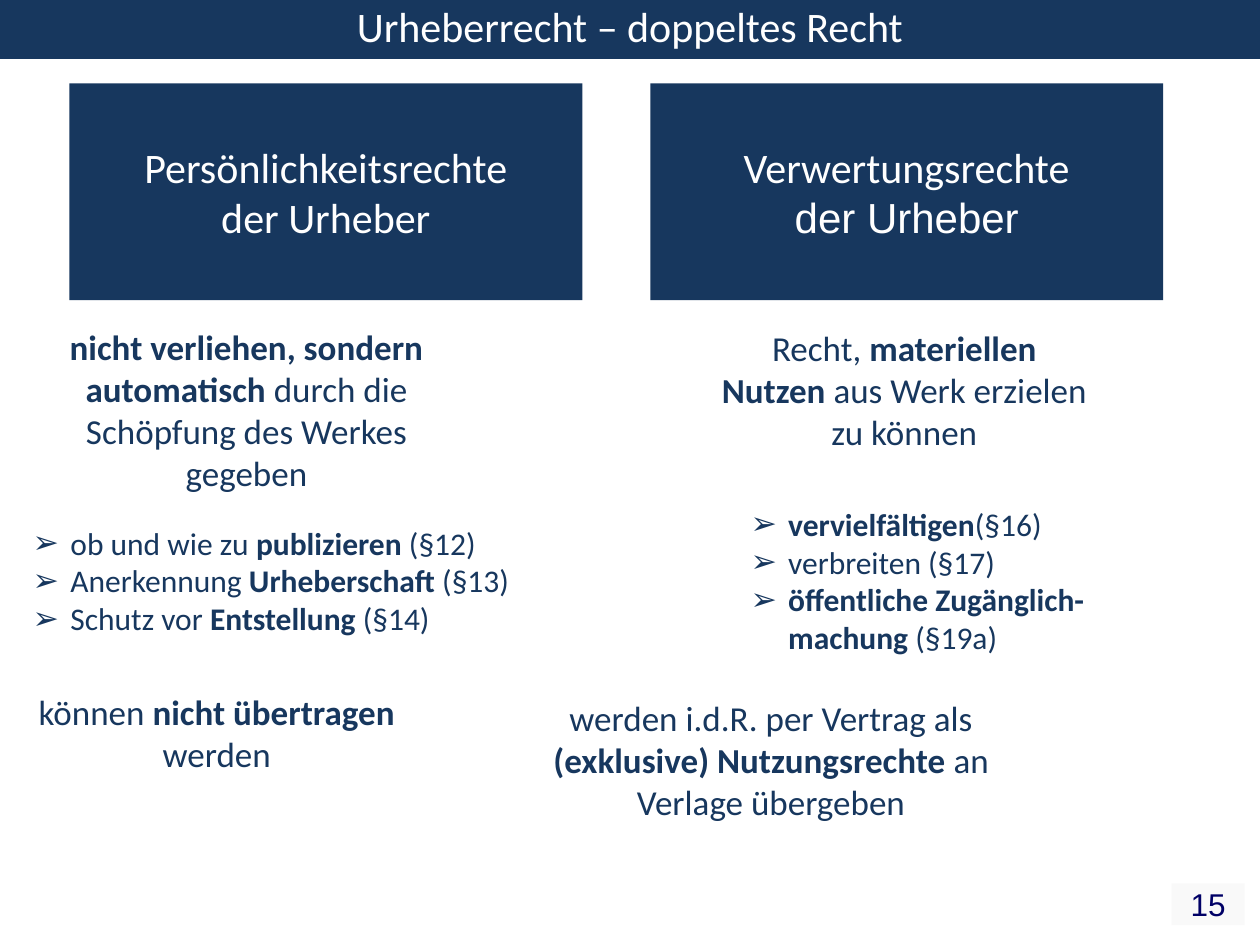
from dataclasses import dataclass

from lxml import etree
from pptx import Presentation
from pptx.dml.color import RGBColor
from pptx.enum.shapes import MSO_SHAPE
from pptx.enum.text import MSO_ANCHOR, MSO_AUTO_SIZE, PP_ALIGN
from pptx.oxml.ns import qn
from pptx.util import Cm, Pt

RECT = MSO_SHAPE.RECTANGLE
TOP, MIDDLE = MSO_ANCHOR.TOP, MSO_ANCHOR.MIDDLE
LEFT, CENTER = PP_ALIGN.LEFT, PP_ALIGN.CENTER
NO_FIT = MSO_AUTO_SIZE.NONE

COLORS = {"navy": "17375E", "white": "FFFFFF", "grey": "F9F9F9", "blue": "000066"}
TWO_CONTENT_LAYOUT = 3
INDENT = Cm(0.76)
HEAD_FRAME = {"margin_left": Cm(0.25), "margin_right": Cm(0.25),
              "margin_top": Cm(0.13), "margin_bottom": Cm(0.13)}
TEXT_FRAME = HEAD_FRAME | {"margin_top": Cm(0.3), "margin_bottom": Cm(0.3)}


@dataclass
class Box:
    """A filled text box in cm; words between ** marks are bold."""
    left: float
    top: float
    width: float
    height: float
    lines: list[str]
    size: int = 20
    color: str = "navy"
    fill: str = "white"
    bullets: bool = False
    anchor: MSO_ANCHOR = MIDDLE
    fonts: tuple[str, ...] = ("Calibri",)


TITLE = Box(0, 0, 25.4, 1.19, ["Urheberrecht – doppeltes Recht"], 24, "white", "navy",
            anchor=TOP)
LISTS = [
    Box(0.41, 10.24, 11.51, 2.92,
        ["ob und wie zu **publizieren** (§12)",
         "Anerkennung **Urheberschaft** (§13)",
         "Schutz vor **Entstellung** (§14)"], 18, bullets=True),
    Box(14.88, 9.86, 8.53, 3.68,
        ["**vervielfältigen**(§16)",
         "verbreiten (§17)",
         "**öffentliche Zugänglich- machung **(§19a)"], 18, bullets=True),
]
HEADINGS = [
    Box(left, 1.68, 10.34, 4.37, [first, "der Urheber"], 24, "white", "navy", fonts=fonts)
    for left, first, fonts in [
        (1.4, "Persönlichkeitsrechte", ("Calibri", "Calibri")),
        (13.11, "Verwertungsrechte", ("Calibri", "Arial")),
    ]
]
STATEMENTS = [
    Box(0.41, 6.25, 9.12, 4.01,
        ["**nicht verliehen, sondern automatisch **durch die Schöpfung des Werkes gegeben"]),
    Box(0.41, 13.61, 7.92, 2.31, ["können **nicht übertragen **werden"]),
    Box(14.27, 6.27, 7.92, 3.18, ["Recht, **materiellen Nutzen **aus Werk erzielen zu können"]),
    Box(10.49, 13.72, 10.11, 3.18,
        ["werden i.d.R. per Vertrag als **(exklusive) Nutzungsrechte **an Verlage übergeben"]),
]
PAGE_NUMBER = Box(23.62, 17.81, 1.47, 0.84, ["15"], 18, "blue", "grey", fonts=("Arial",))


def rgb(name: str) -> RGBColor:
    return RGBColor.from_string(COLORS[name])


def set_all(target, values: dict) -> None:
    for name, value in values.items():
        setattr(target, name, value)


def set_bullet(p, shown: bool) -> None:
    pPr = p._p.get_or_add_pPr()
    pPr.set("marL", str(INDENT if shown else 0))
    pPr.set("indent", str(-INDENT if shown else 0))
    if shown:
        etree.SubElement(pPr, qn("a:buFont"), typeface="Arial")
        etree.SubElement(pPr, qn("a:buChar"), char="➢")
    else:
        etree.SubElement(pPr, qn("a:buNone"))


def write_line(p, line: str, box: Box, font: str) -> None:
    set_all(p, {"alignment": LEFT if box.bullets else CENTER,
                "space_before": Pt(0), "space_after": Pt(0)})
    set_bullet(p, box.bullets)
    for i, part in enumerate(line.split("**")):
        if part:
            r = p.add_run()
            r.text = part
            set_all(r.font, {"name": font, "size": Pt(box.size), "bold": i % 2 == 1})
            r.font.color.rgb = rgb(box.color)


def format_box(sp, box: Box, frame: dict) -> None:
    """Place a shape or placeholder, fill it and write its text."""
    set_all(sp, {"left": Cm(box.left), "top": Cm(box.top),
                 "width": Cm(box.width), "height": Cm(box.height)})
    sp.fill.solid()
    sp.fill.fore_color.rgb = rgb(box.fill)
    sp.line.fill.background()
    tf = sp.text_frame
    set_all(tf, frame | {"word_wrap": True, "auto_size": NO_FIT,
                         "vertical_anchor": box.anchor})
    for i, line in enumerate(box.lines):
        p = tf.add_paragraph() if i else tf.paragraphs[0]
        write_line(p, line, box, box.fonts[i % len(box.fonts)])


def add_box(slide, box: Box, frame: dict) -> None:
    sp = slide.shapes.add_shape(RECT, 0, 0, 0, 0)
    sp.shadow.inherit = False
    format_box(sp, box, frame)


def main() -> None:
    prs = Presentation()
    set_all(prs, {"slide_width": Cm(25.4), "slide_height": Cm(19.05)})
    slide = prs.slides.add_slide(prs.slide_layouts[TWO_CONTENT_LAYOUT])
    title, *bodies = slide.placeholders

    format_box(title, TITLE, HEAD_FRAME)
    title.text_frame.paragraphs[0].line_spacing = 0.9
    for body, box in zip(bodies, LISTS):
        format_box(body, box, TEXT_FRAME)
    for box in HEADINGS + [PAGE_NUMBER]:
        add_box(slide, box, HEAD_FRAME)
    for box in STATEMENTS:
        add_box(slide, box, TEXT_FRAME)

    prs.save("out.pptx")


if __name__ == "__main__":
    main()
